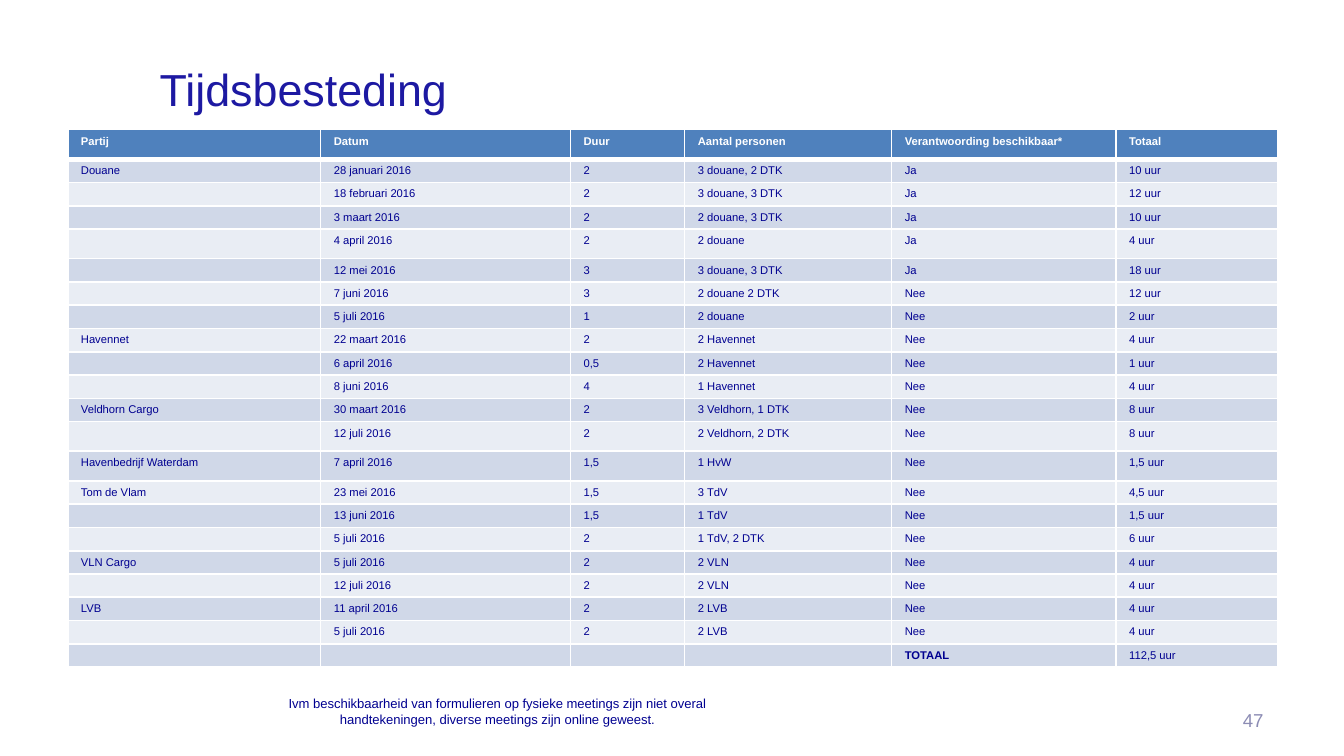
from lxml import etree
from pptx import Presentation
from pptx.dml.color import RGBColor
from pptx.enum.text import MSO_ANCHOR, PP_ALIGN
from pptx.oxml.ns import qn
from pptx.util import Cm, Pt

LEFT, CENTER, RIGHT = PP_ALIGN.LEFT, PP_ALIGN.CENTER, PP_ALIGN.RIGHT
TOP, MIDDLE, BOTTOM = MSO_ANCHOR.TOP, MSO_ANCHOR.MIDDLE, MSO_ANCHOR.BOTTOM

WHITE = RGBColor(0xFF, 0xFF, 0xFF)
NAVY = RGBColor(0x00, 0x00, 0x90)
TITLE_BLUE = RGBColor(0x1D, 0x19, 0xA2)
PAGE_GREY = RGBColor(0x8C, 0x8C, 0xB4)
HEADER_BLUE = RGBColor(0x4F, 0x81, 0xBD)
BAND_DARK = RGBColor(0xD0, 0xD8, 0xE8)
BAND_LIGHT = RGBColor(0xE9, 0xED, 0xF4)

FONT = "Arial"
TABLE_SIZE = 6
COLUMN_WIDTHS = [4.78, 4.72, 2.16, 3.91, 4.24, 3.05]
ROW_HEIGHT, TALL_HEIGHT = 0.44, 0.56
TALL_ROWS = {0, 4, 12, 13}

HEADER = ["Partij", "Datum", "Duur", "Aantal personen",
          "Verantwoording beschikbaar*", "Totaal"]
MEETINGS = [
    ("Douane", "28 januari 2016", "2", "3 douane, 2 DTK", "Ja", "10 uur"),
    ("", "18 februari 2016", "2", "3 douane, 3 DTK", "Ja", "12 uur"),
    ("", "3 maart 2016", "2", "2 douane, 3 DTK", "Ja", "10 uur"),
    ("", "4 april 2016", "2", "2 douane", "Ja", "4 uur"),
    ("", "12 mei 2016", "3", "3 douane, 3 DTK", "Ja", "18 uur"),
    ("", "7 juni 2016", "3", "2 douane 2 DTK", "Nee", "12 uur"),
    ("", "5 juli 2016", "1", "2 douane", "Nee", "2 uur"),
    ("Havennet", "22 maart 2016", "2", "2 Havennet", "Nee", "4 uur"),
    ("", "6 april 2016", "0,5", "2 Havennet", "Nee", "1 uur"),
    ("", "8 juni 2016", "4", "1 Havennet", "Nee", "4 uur"),
    ("Veldhorn Cargo", "30 maart 2016", "2", "3 Veldhorn, 1 DTK", "Nee", "8 uur"),
    ("", "12 juli 2016", "2", "2 Veldhorn, 2 DTK", "Nee", "8 uur"),
    ("Havenbedrijf Waterdam", "7 april 2016", "1,5", "1 HvW", "Nee", "1,5 uur"),
    ("Tom de Vlam", "23 mei 2016", "1,5", "3 TdV", "Nee", "4,5 uur"),
    ("", "13 juni 2016", "1,5", "1 TdV", "Nee", "1,5 uur"),
    ("", "5 juli 2016", "2", "1 TdV, 2 DTK", "Nee", "6 uur"),
    ("VLN Cargo", "5 juli 2016", "2", "2 VLN", "Nee", "4 uur"),
    ("", "12 juli 2016", "2", "2 VLN", "Nee", "4 uur"),
    ("LVB", "11 april 2016", "2", "2 LVB", "Nee", "4 uur"),
    ("", "5 juli 2016", "2", "2 LVB", "Nee", "4 uur"),
    ("", "", "", "", "TOTAAL", "112,5 uur"),
]


def style_paragraph(para, size, color, bold=False, align=LEFT):
    para.alignment = align
    para.font.name = FONT
    para.font.size = Pt(size)
    para.font.bold = bold
    para.font.color.rgb = color


def add_text(page, box, text, size, color, align=LEFT, anchor=TOP):
    shape = page.shapes.add_textbox(*(Cm(length) for length in box))
    frame = shape.text_frame
    frame.word_wrap = True
    frame.vertical_anchor = anchor
    frame.text = text
    style_paragraph(frame.paragraphs[0], size, color, align=align)


def add_borders(cell, top, bottom):
    """Draw white cell borders; top and bottom are widths in points."""
    properties = cell._tc.get_or_add_tcPr()
    for side, width in (("L", 1), ("R", 1), ("T", top), ("B", bottom)):
        line = etree.SubElement(properties, qn(f"a:ln{side}"), w=str(Pt(width)))
        fill = etree.SubElement(line, qn("a:solidFill"))
        etree.SubElement(fill, qn("a:srgbClr"), val=str(WHITE))


def fill_cell(cell, text, row_index):
    is_header = row_index == 0
    add_borders(cell, top=3 if row_index == 1 else 1, bottom=3 if is_header else 1)
    cell.fill.solid()
    band = BAND_DARK if row_index % 2 else BAND_LIGHT
    cell.fill.fore_color.rgb = HEADER_BLUE if is_header else band
    cell.margin_left = cell.margin_right = Cm(0.25)
    cell.margin_top = cell.margin_bottom = Cm(0.1)
    cell.text = text
    para = cell.text_frame.paragraphs[0]
    style_paragraph(para, TABLE_SIZE, WHITE if is_header else NAVY,
                    bold=is_header or text == "TOTAAL")
    if not text:
        # Keeps empty cells from stretching their row
        etree.SubElement(para._p, qn("a:endParaRPr"), sz=str(TABLE_SIZE * 100))


def add_time_table(page, box):
    rows = [HEADER, *MEETINGS]
    frame = page.shapes.add_table(len(rows), len(HEADER),
                                  *(Cm(length) for length in box))
    table = frame.table
    for column, width in zip(table.columns, COLUMN_WIDTHS):
        column.width = Cm(width)
    for row_index, texts in enumerate(rows):
        height = TALL_HEIGHT if row_index in TALL_ROWS else ROW_HEIGHT
        table.rows[row_index].height = Cm(height)
        for column_index, text in enumerate(texts):
            fill_cell(table.cell(row_index, column_index), text, row_index)


def main():
    deck = Presentation()
    deck.slide_width, deck.slide_height = Cm(25.4), Cm(14.29)
    page = deck.slides.add_slide(deck.slide_layouts[6])

    # Time table
    add_time_table(page, (1.28, 2.45, 22.86, 10.16))
    # Title
    add_text(page, (2.77, 0.58, 21.36, 1.73), "Tijdsbesteding", 24, TITLE_BLUE,
             anchor=BOTTOM)
    # Page number
    add_text(page, (18.21, 13.23, 5.92, 0.76), "47", 10, PAGE_GREY,
             align=RIGHT, anchor=MIDDLE)
    # Footnote
    add_text(page, (4.98, 13.03, 8.84, 0.86),
             "Ivm beschikbaarheid van formulieren op fysieke meetings zijn niet "
             "overal handtekeningen, diverse meetings zijn online geweest.",
             7, NAVY, align=CENTER)

    deck.save("out.pptx")


if __name__ == "__main__":
    main()
